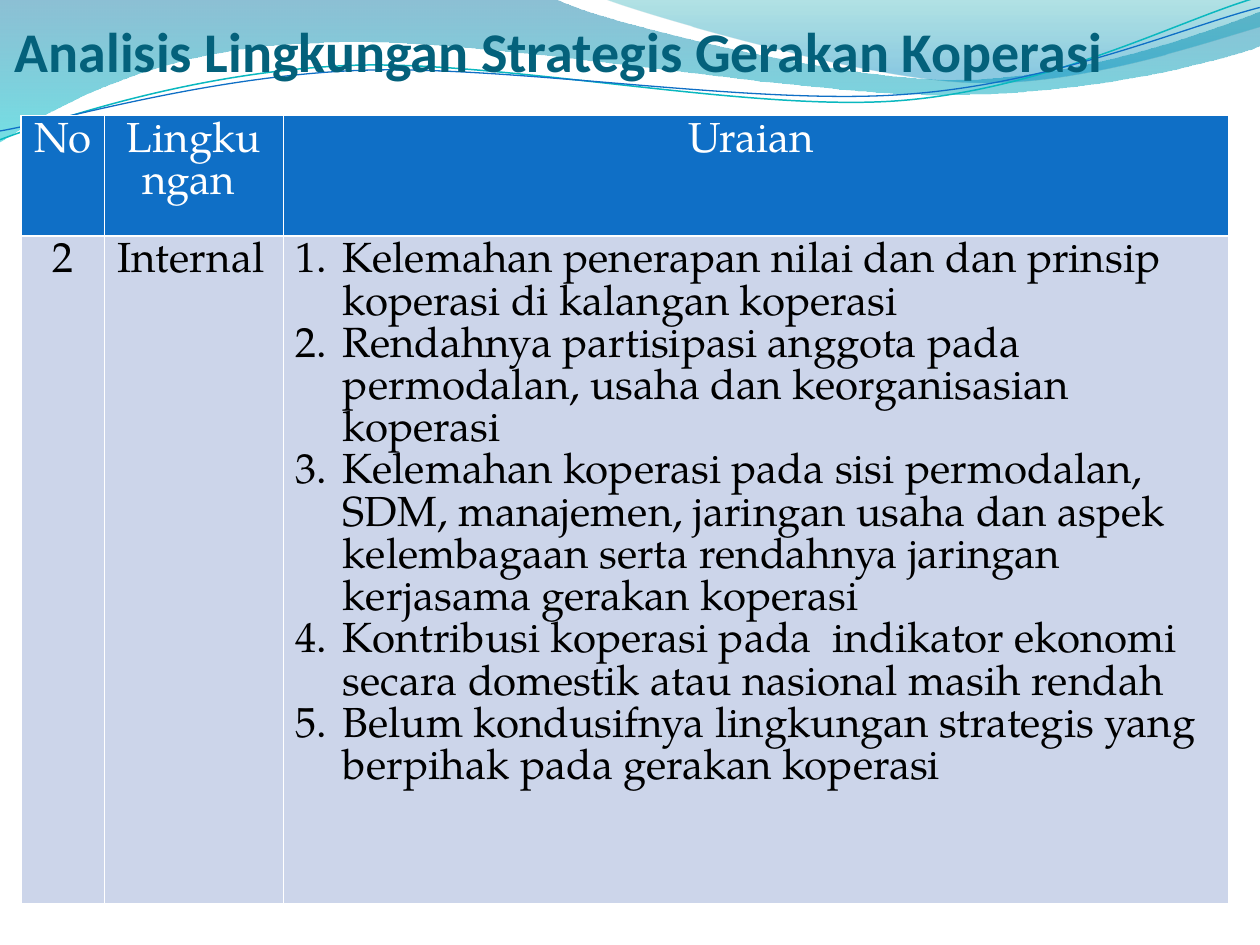
from collections import namedtuple
from dataclasses import dataclass
from math import cos, radians, sin

from lxml.etree import SubElement
from pptx import Presentation
from pptx.dml.color import RGBColor
from pptx.enum.text import MSO_ANCHOR, PP_ALIGN
from pptx.oxml.ns import qn
from pptx.util import Cm, Pt

Box = namedtuple("Box", "left top width height")


@dataclass(frozen=True)
class Theme:
    title_font: str = "Calibri"
    body_font: str = "TeX Gyre Pagella"
    title_size: int = 32
    body_size: int = 24
    title: str = "04617B"
    header: str = "0F6FC6"
    body: str = "CCD5EA"
    light: str = "FFFFFF"
    dark: str = "000000"
    left_wave: tuple = ((0, "0074A1", 45), (1, "00C6CF", 55))
    right_wave: tuple = ((0, "00A1A9", 30), (0.8, "008BBF", 45))
    teal_line: str = "0AB8BF"


THEME = Theme()
CURVE_TILT = -2.7

LEFT_WAVE = [
    (0, 0), (4.4, -0.01),
    (4.76, 0.17, 6.64, 0.63, 7.58, 0.63), (8.53, 0.63, 9.58, 0.26, 10, 0.09),
    (10.01, 0.36),
    (9.83, 0.44, 8.7, 0.76, 7.46, 0.75), (6.22, 0.75, 3.82, 0.28, 2.57, 0.34),
    (1.29, 0.36, 0.46, 0.83, -0.01, 1.13), (0, 0),
]
RIGHT_WAVE = [
    (4.79, -0.01),
    (5.09, 0.11, 6.82, 0.62, 7.69, 0.65), (8.56, 0.69, 9.61, 0.32, 10, 0.21),
    (10, 0), (4.79, -0.01),
]
TEAL_CURVE = [
    (0, 1.11),
    (0.48, 0.93, 1.58, 0.57, 2.77, 0.52), (3.95, 0.47, 5.93, 0.89, 7.13, 0.8),
    (8.33, 0.71, 9.38, 0.15, 9.98, -0.02),
]
BLUE_CURVE = [
    (0, 1.04),
    (0.47, 0.96, 1.64, 0.61, 2.83, 0.56), (4.03, 0.51, 5.97, 0.84, 7.17, 0.75),
    (8.36, 0.67, 9.41, 0.21, 10, 0.06),
]
HEADINGS = ["No ", "Lingkungan ", "Uraian "]
ISSUES = [
    "Kelemahan penerapan nilai dan dan prinsip koperasi di kalangan koperasi",
    "Rendahnya partisipasi anggota pada permodalan, usaha dan keorganisasian koperasi",
    "Kelemahan koperasi pada sisi permodalan, SDM, manajemen, jaringan usaha dan aspek "
    "kelembagaan serta rendahnya jaringan kerjasama gerakan koperasi",
    "Kontribusi koperasi pada  indikator ekonomi secara domestik atau nasional masih rendah",
    "Belum kondusifnya lingkungan strategis yang berpihak pada gerakan koperasi",
]


def rgb(color):
    return RGBColor.from_string(color)


def write(paragraph, text, font=THEME.body_font, size=THEME.body_size,
          color=THEME.dark, bold=False, align=PP_ALIGN.LEFT):
    paragraph.alignment = align
    run = paragraph.add_run()
    run.text = text
    run.font.name = font
    run.font.size = Pt(size)
    run.font.bold = bold
    run.font.color.rgb = rgb(color)


def number(paragraph, indent):
    properties = paragraph._p.get_or_add_pPr()
    properties.set("marL", str(indent))
    properties.set("indent", str(-indent))
    SubElement(properties, qn("a:buFont"), typeface="+mj-lt")
    SubElement(properties, qn("a:buAutoNum"), type="arabicPeriod")


def level(points, tilt):
    pivot_x, pivot_y = ((min(axis) + max(axis)) / 2 for axis in zip(points[0], points[-1]))
    c, s = cos(radians(-tilt)), sin(radians(-tilt))
    return [(pivot_x + (x - pivot_x) * c - (y - pivot_y) * s,
             pivot_y + (x - pivot_x) * s + (y - pivot_y) * c) for x, y in points]


def bend(shape, outline):
    route = shape._element.find(".//" + qn("a:path"))
    steps = iter(route.findall(qn("a:lnTo")))
    for segment in outline[1:]:
        first = next(steps)
        if len(segment) == 6:
            cubic = SubElement(route, qn("a:cubicBezTo"))
            first.addprevious(cubic)
            for step in (first, next(steps), next(steps)):
                cubic.append(step[0])
                route.remove(step)


def add_outline(slide, box, outline, close=False, tilt=0):
    unit = box.width / 10
    points = [(box.left + segment[i] * unit, box.top + segment[i + 1] * unit)
              for segment in outline for i in range(0, len(segment), 2)]
    points = level(points, tilt)
    builder = slide.shapes.build_freeform(*points[0])
    builder.add_line_segments(points[1:], close=close)
    shape = builder.convert_to_shape()
    bend(shape, outline)
    shape.rotation = tilt
    shape.shadow.inherit = False
    return shape


def add_wave(slide, box, outline, stops):
    wave = add_outline(slide, box, outline, close=True)
    wave.line.fill.background()
    wave.fill.gradient()
    wave.fill.gradient_angle = 270
    for stop, (position, color, opacity) in zip(wave.fill.gradient_stops, stops):
        stop.position = position
        stop.color.rgb = rgb(color)
        SubElement(stop._gs.find(qn("a:srgbClr")), qn("a:alpha"), val=str(opacity * 1000))


def add_curve(slide, box, outline, color, weight):
    curve = add_outline(slide, box, outline, tilt=CURVE_TILT)
    curve.fill.background()
    curve.line.color.rgb = rgb(color)
    curve.line.width = Pt(weight)


def add_backdrop(slide, box):
    add_wave(slide, box, LEFT_WAVE, THEME.left_wave)
    add_wave(slide, box, RIGHT_WAVE, THEME.right_wave)
    add_curve(slide, box, TEAL_CURVE, THEME.teal_line, 0.85)
    add_curve(slide, box, BLUE_CURVE, THEME.header, 0.75)


def add_title(slide, box, text):
    frame = slide.shapes.add_textbox(*box).text_frame
    frame.word_wrap = True
    frame.vertical_anchor = MSO_ANCHOR.BOTTOM
    frame.margin_left = frame.margin_right = frame.margin_bottom = 0
    frame.margin_top = Cm(0.13)
    write(frame.paragraphs[0], text, font=THEME.title_font, size=THEME.title_size,
          color=THEME.title, bold=True)


def style_cell(cell, color):
    properties = cell._tc.get_or_add_tcPr()
    for side in "LRTB":
        border = SubElement(properties, qn(f"a:ln{side}"), w=str(Pt(1)))
        SubElement(SubElement(border, qn("a:solidFill")), qn("a:srgbClr"), val=THEME.light)
    cell.fill.solid()
    cell.fill.fore_color.rgb = rgb(color)


def add_analysis(slide, box):
    table = slide.shapes.add_table(2, 3, *box).table
    number_width, scope_width, header_height = Cm(1.69), Cm(3.6), Cm(2.43)
    widths = (number_width, scope_width, box.width - number_width - scope_width)
    for column, width in zip(table.columns, widths):
        column.width = width
    for row, height in zip(table.rows, (header_height, box.height - header_height)):
        row.height = height

    for column, heading in enumerate(HEADINGS):
        header, body = table.cell(0, column), table.cell(1, column)
        style_cell(header, THEME.header)
        style_cell(body, THEME.body)
        write(header.text_frame.paragraphs[0], heading, color=THEME.light,
              align=PP_ALIGN.CENTER)

    write(table.cell(1, 0).text_frame.paragraphs[0], "2", align=PP_ALIGN.CENTER)
    write(table.cell(1, 1).text_frame.paragraphs[0], "Internal")
    description = table.cell(1, 2).text_frame
    for index, issue in enumerate(ISSUES):
        paragraph = description.add_paragraph() if index else description.paragraphs[0]
        write(paragraph, issue)
        number(paragraph, Cm(0.95))


def main():
    deck = Presentation()
    deck.slide_width, deck.slide_height = Cm(25.4), Cm(19.05)
    slide = deck.slides.add_slide(deck.slide_layouts[6])
    add_backdrop(slide, Box(0, 0, deck.slide_width, deck.slide_height))
    add_title(slide, Box(Cm(0.3), Cm(0.42), Cm(24.8), Cm(1.27)),
              "Analisis Lingkungan Strategis Gerakan Koperasi")
    add_analysis(slide, Box(Cm(0.42), Cm(2.33), Cm(24.36), Cm(15.86)))
    deck.save("out.pptx")


if __name__ == "__main__":
    main()
